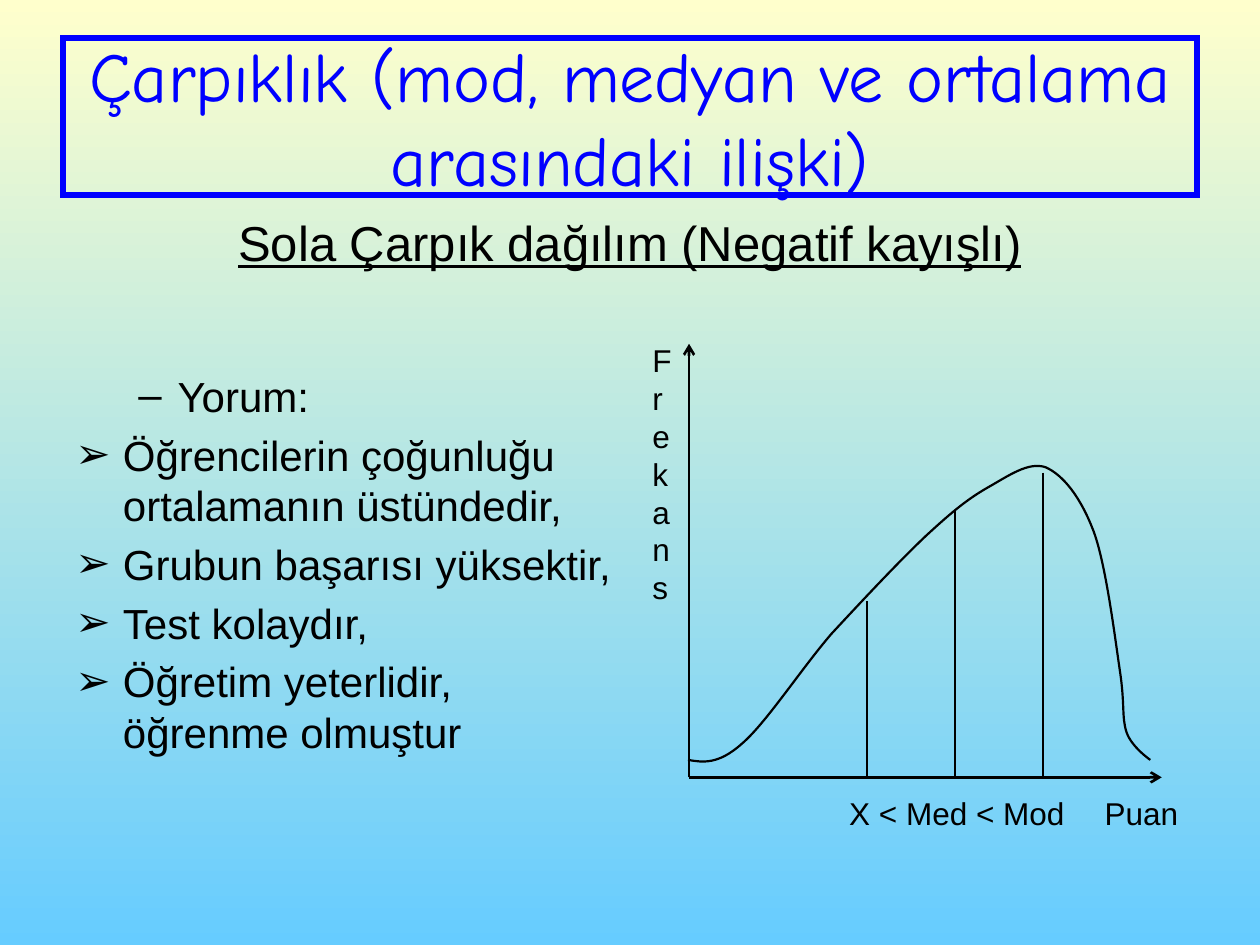
import pptx
import pptx.dml.color
import pptx.enum.dml
import pptx.enum.shapes
import pptx.enum.text
import pptx.oxml
import pptx.oxml.ns
import pptx.util
import lxml.etree

Cm, Pt = pptx.util.Cm, pptx.util.Pt
ALIGN = pptx.enum.text.PP_ALIGN
qn = pptx.oxml.ns.qn
NS = pptx.oxml.ns.nsdecls("a")
BLACK, BLUE = "000000", "0000FF"


def paint(color, code):
    color.rgb = pptx.dml.color.RGBColor.from_string(code)


def write(para, text, size, font="Arial", code=BLACK):
    """Add one styled run to the paragraph and return it."""
    run = para.add_run()
    run.text = text
    run.font.size = Pt(size)
    run.font.name = font
    paint(run.font.color, code)
    return run


deck = pptx.Presentation()
deck.slide_width, deck.slide_height = Cm(25.4), Cm(19.05)
slide = deck.slides.add_slide(deck.slide_layouts[6])
shapes = slide.shapes

back = slide.background.fill
back.gradient()
back.gradient_angle = 270
for stop, code in zip(back.gradient_stops, ("FFFFCC", "66CCFF")):
    paint(stop.color, code)

# Title
title = shapes.add_shape(pptx.enum.shapes.MSO_SHAPE.RECTANGLE,
                         Cm(1.27), Cm(0.76), Cm(22.86), Cm(3.18))
title.shadow.inherit = False
title.fill.background()
paint(title.line.color, BLUE)
title.line.width = Pt(3.25)
title.line._get_or_add_ln().append(
    pptx.oxml.parse_xml(f'<a:miter {NS} lim="800000"/>'))
title.text_frame.word_wrap = True
title.text_frame.vertical_anchor = pptx.enum.text.MSO_ANCHOR.MIDDLE
para = title.text_frame.paragraphs[0]
para.alignment = ALIGN.CENTER
write(para, "Çarpıklık (mod, medyan ve ortalama arasındaki ilişki)",
      40, "Comic Neue", BLUE)

# Bullet list: text, bullet, left margin, hanging indent
items = [("Yorum:", "–", 2.06, 0.79)] + [
    (text, "➢", 0.96, 0.96) for text in (
        "Öğrencilerin çoğunluğu ortalamanın üstündedir,",
        "Grubun başarısı yüksektir,",
        "Test kolaydır,",
        "Öğretim yeterlidir, öğrenme olmuştur")]
body = shapes.add_textbox(Cm(1.27), Cm(7.34), Cm(11.43), Cm(10.11)).text_frame
body.word_wrap = True
for row, (text, mark, left, hang) in enumerate(items):
    para = body.add_paragraph() if row else body.paragraphs[0]
    para.space_before = Pt(4.8)
    write(para, text, 24)
    props = para._p.get_or_add_pPr()
    props.set("marL", str(Cm(left)))
    props.set("indent", str(-Cm(hang)))
    props.append(pptx.oxml.parse_xml(f'<a:buFont {NS} typeface="Arial"/>'))
    props.append(pptx.oxml.parse_xml(f'<a:buChar {NS} char="{mark}"/>'))

# Axes and the stems of mean, median and mode
left, base = 13.89, 15.67
lines = [(left, base, left, 6.93, 1.5, True),
         (left, base, 23.42, base, 1.5, True)]
for step, top in enumerate((12.12, 10.31, 9.53)):
    x = 17.47 + 1.78 * step
    lines.append((x, top, x, base, 1.25, False))
for x1, y1, x2, y2, width, arrow in lines:
    line = shapes.add_connector(pptx.enum.shapes.MSO_CONNECTOR.STRAIGHT,
                                Cm(x1), Cm(y1), Cm(x2), Cm(y2))
    paint(line.line.color, BLACK)
    line.line.width = Pt(width)
    if arrow:
        line.line._get_or_add_ln().append(
            pptx.oxml.parse_xml(f'<a:tailEnd {NS} type="arrow"/>'))
    line._element.spPr.append(pptx.oxml.parse_xml(f"<a:effectLst {NS}/>"))

# Skewed curve: each row holds two control points and an end point
bends = [
    (14.17, 15.37), (14.48, 15.42), (14.96, 14.99),
    (15.44, 14.58), (16.15, 13.49), (16.76, 12.78),
    (17.40, 12.09), (18.14, 11.30), (18.67, 10.80),
    (19.20, 10.31), (19.51, 10.06), (19.91, 9.83),
    (20.32, 9.60), (20.73, 9.30), (21.08, 9.42),
    (21.44, 9.58), (21.79, 10.03), (22.05, 10.72),
    (22.30, 11.40), (22.48, 12.88), (22.58, 13.54),
    (22.68, 14.22), (22.61, 14.45), (22.71, 14.76),
    (22.81, 15.06), (23.19, 15.32), (23.19, 15.32),
]
pen = shapes.build_freeform(Cm(13.87), Cm(15.32))
pen.add_line_segments([(Cm(x), Cm(y)) for x, y in bends], close=False)
curve = pen.convert_to_shape()
curve.shadow.inherit = False
curve.fill.background()
paint(curve.line.color, BLACK)
curve.line.width = Pt(1.25)

# Join every three straight segments into one Bezier segment
parts = list(curve._element.iter(qn("a:lnTo")))
for i in range(0, len(parts), 3):
    bend = lxml.etree.Element(qn("a:cubicBezTo"))
    parts[i].addprevious(bend)
    for part in parts[i:i + 3]:
        bend.append(part[0])
        part.getparent().remove(part)

# Labels: text, left, top, width, height
for text, *box in (("Puan", 22.02, 15.88, 2.77, 1.02),
                   ("Frekans", 12.9, 6.76, 0.99, 5.64),
                   ("X < Med < Mod", 16.87, 15.88, 5.16, 1.02)):
    frame = shapes.add_textbox(*map(Cm, box)).text_frame
    frame.word_wrap = True
    write(frame.paragraphs[0], text, 18)

# Subtitle
frame = shapes.add_textbox(Cm(3.96), Cm(4.16), Cm(17.48), Cm(1.45)).text_frame
frame.word_wrap = True
para = frame.paragraphs[0]
para.alignment = ALIGN.CENTER
para.space_after = Pt(6)
write(para, "Sola Çarpık dağılım (Negatif kayışlı)", 28).font.underline = True

deck.save("out.pptx")
